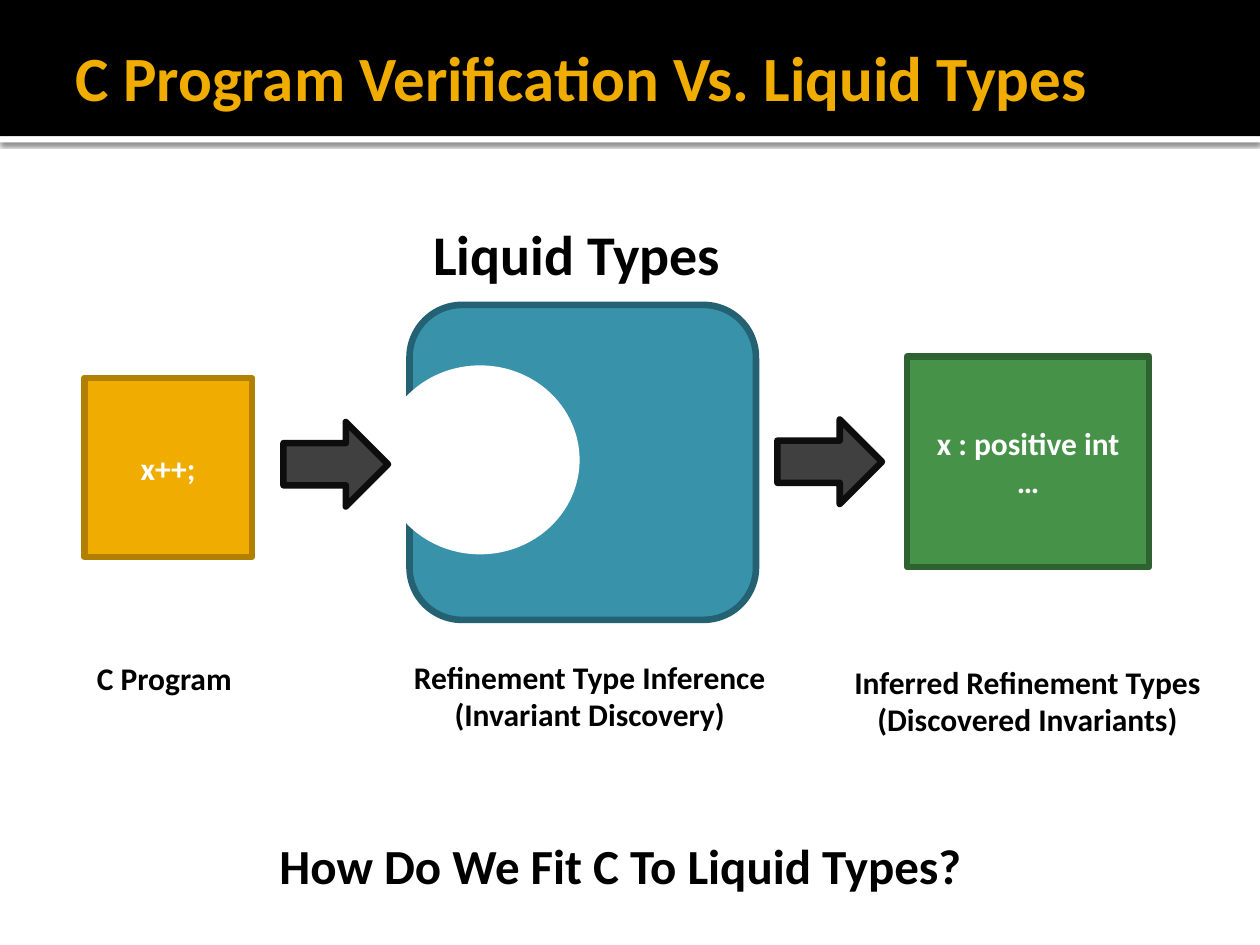
from lxml import etree
from pptx import Presentation
from pptx.dml.color import RGBColor
from pptx.enum.shapes import MSO_SHAPE
from pptx.enum.text import MSO_ANCHOR, MSO_AUTO_SIZE, PP_ALIGN
from pptx.oxml import parse_xml
from pptx.util import Inches, Pt

RECTANGLE, ROUNDED = MSO_SHAPE.RECTANGLE, MSO_SHAPE.ROUNDED_RECTANGLE
ELLIPSE, ARROW = MSO_SHAPE.OVAL, MSO_SHAPE.RIGHT_ARROW
MIDDLE = MSO_ANCHOR.MIDDLE
NO_FIT, GROW = MSO_AUTO_SIZE.NONE, MSO_AUTO_SIZE.SHAPE_TO_FIT_TEXT
LEFT, CENTER = PP_ALIGN.LEFT, PP_ALIGN.CENTER

BLACK = RGBColor(0x00, 0x00, 0x00)
WHITE = RGBColor(0xFF, 0xFF, 0xFF)
AMBER, AMBER_EDGE = RGBColor(0xF0, 0xAD, 0x00), RGBColor(0xB2, 0x80, 0x00)
TEAL, TEAL_EDGE = RGBColor(0x37, 0x92, 0xAA), RGBColor(0x24, 0x61, 0x72)
GREEN, GREEN_EDGE = RGBColor(0x47, 0x92, 0x49), RGBColor(0x2F, 0x62, 0x31)
GRAY, GRAY_EDGE = RGBColor(0x40, 0x40, 0x40), RGBColor(0x0D, 0x0D, 0x0D)

FONT = "Calibri"
DRAWING = "http://schemas.openxmlformats.org/drawingml/2006/main"
SHADOW = f"""<a:outerShdw xmlns:a="{DRAWING}" blurRad="{Pt(2.5)}" dist="{Pt(0.8)}"
  dir="5400000" algn="t" rotWithShape="0">
  <a:srgbClr val="000000"><a:alpha val="60000"/></a:srgbClr></a:outerShdw>"""


def inches(box):
    return [Inches(length) for length in box]


def write(frame, lines, size, color, align):
    """Fill a text frame with one bold paragraph per line."""
    for index, line in enumerate(lines):
        para = frame.add_paragraph() if index else frame.paragraphs[0]
        para.text = line
        para.alignment = align
        para.font.name = FONT
        para.font.size = Pt(size)
        para.font.bold = True
        para.font.color.rgb = color


def add_block(page, kind, box, fill, edge=None, lines=()):
    block = page.shapes.add_shape(kind, *inches(box))
    block.fill.solid()
    block.fill.fore_color.rgb = fill
    if edge is None:
        block.line.fill.background()
    else:
        block.line.color.rgb = edge
        block.line.width = Pt(3.78)
    block.shadow.inherit = False
    block.text_frame.vertical_anchor = MIDDLE
    write(block.text_frame, lines, 18, WHITE, CENTER)
    return block


def add_label(page, box, lines, size=18, align=CENTER, wrap=False):
    frame = page.shapes.add_textbox(*inches(box)).text_frame
    frame.word_wrap = wrap
    frame.auto_size = GROW
    write(frame, lines, size, BLACK, align)


def add_header(page, box, text):
    """Black band with a shadowed white stripe below, and the title on it."""
    left, top, width, height = box
    stripe = add_block(page, RECTANGLE, (left, top + height, width, 0.05), WHITE)
    effects = stripe.element.spPr.find(f"{{{DRAWING}}}effectLst")
    effects.append(parse_xml(etree.tostring(etree.fromstring(SHADOW))))
    band = add_block(page, RECTANGLE, box, BLACK)

    title = page.shapes.title
    band.element.addnext(title.element)
    title.left, title.top, title.width, title.height = inches(
        (left + 0.5, top - 0.08, width - 1, 1.37))
    frame = title.text_frame
    frame.auto_size = NO_FIT
    frame.word_wrap = True
    frame.vertical_anchor = MIDDLE
    frame.margin_left = Inches(0.1)
    frame.margin_right = frame.margin_top = frame.margin_bottom = Inches(0.05)
    write(frame, [text], 36, AMBER, LEFT)


def add_inference(page, box):
    """Rounded engine with a round socket on its left side."""
    left, top, width, height = box
    add_block(page, ROUNDED, box, TEAL, TEAL_EDGE)
    add_block(page, ELLIPSE, (left - 0.23, top + 0.48, 1.58, 1.5), WHITE)
    add_label(page, (left + 0.09, top - 0.73, 2.6, 0.64),
              ["Liquid Types"], 32, LEFT)
    add_label(page, (left - 0.13, top + height + 0.25, 3.12, 0.71),
              ["Refinement Type Inference", "(Invariant Discovery)"])


def add_program(page, box):
    left, top, width, height = box
    add_block(page, RECTANGLE, box, AMBER, AMBER_EDGE, ["x++;"])
    add_label(page, (left, top + height + 0.76, 1.35, 0.4),
              ["C Program"], align=LEFT)


def add_result(page, box):
    left, top, width, height = box
    add_block(page, RECTANGLE, box, GREEN, GREEN_EDGE, ["x : positive int", "…"])
    add_label(page, (left - 0.58, top + height + 0.71, 3.07, 0.71),
              ["Inferred Refinement Types", "(Discovered Invariants)"])


def main():
    deck = Presentation()
    deck.slide_width, deck.slide_height = Inches(10), Inches(7.5)
    page = deck.slides.add_slide(deck.slide_layouts[5])

    add_header(page, (0, 0, 10, 1.08), "C Program Verification Vs. Liquid Types")

    # Pipeline from program to inferred types
    add_inference(page, (3.25, 2.42, 2.75, 2.5))
    add_program(page, (0.67, 3, 1.33, 1.42))
    add_result(page, (7.2, 2.83, 1.92, 1.67))
    for left, top in ((2.25, 3.35), (6.17, 3.33)):
        add_block(page, ARROW, (left, top, 0.83, 0.67), GRAY, GRAY_EDGE)

    # Closing question
    add_label(page, (2.12, 6.58, 5.76, 0.57),
              ["How Do We Fit C To Liquid Types?"], 28, LEFT, wrap=True)
    deck.save("out.pptx")


if __name__ == "__main__":
    main()
